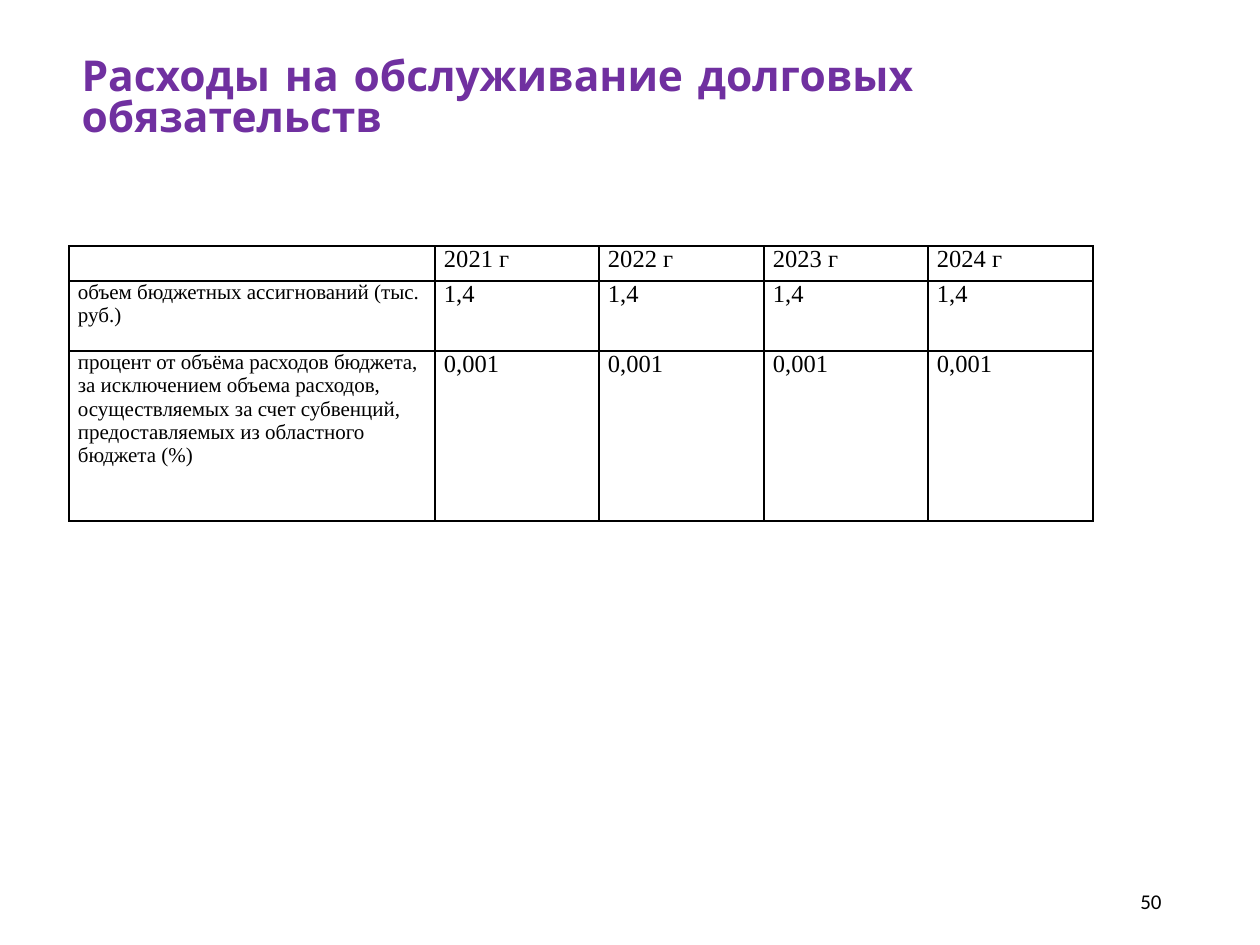
from dataclasses import dataclass

from lxml.etree import SubElement
from pptx import Presentation
from pptx.dml.color import RGBColor as Color
from pptx.enum.text import MSO_ANCHOR as Anchor, MSO_AUTO_SIZE as AutoSize, PP_ALIGN as Align
from pptx.oxml.ns import qn
from pptx.util import Pt

EMU_PER_INCH = 914400
PX_PER_INCH = 126


@dataclass(frozen=True)
class Theme:
    ink: str = "000000"
    accent: str = "7030A0"
    paper: str = "FFFFFF"
    title_font: str = "Comic Neue"
    table_font: str = "Times New Roman"
    number_font: str = "Calibri"
    title_size: float = 24.3
    value_size: float = 14
    label_size: float = 12
    border: float = 1


def px(length):
    return round(length * EMU_PER_INCH / PX_PER_INCH)


class SlideBuilder:
    """Draws themed elements on the current slide, with lengths in px."""

    def __init__(self, deck, theme):
        self.theme = theme
        self.page = deck.slides.add_slide(deck.slide_layouts[5])
        fill = self.page.background.fill
        fill.solid()
        fill.fore_color.rgb = Color.from_string(theme.paper)

    def span(self, para, text, font, size, color, bold=False):
        span = para.add_run()
        span.text = text
        span.font.name = font
        span.font.size = Pt(size)
        span.font.bold = bold
        span.font.color.rgb = Color.from_string(color)

    def title(self, text, left, top, width, height):
        box = self.page.shapes.title
        box.left, box.top, box.width, box.height = map(px, (left, top, width, height))
        frame = box.text_frame
        frame.auto_size = AutoSize.NONE
        frame.word_wrap = True
        frame.vertical_anchor = Anchor.TOP
        frame.margin_top = frame.margin_bottom = 0
        para = frame.paragraphs[0]
        para.alignment = Align.LEFT
        para.line_spacing = 0.8
        self.span(para, text, self.theme.title_font, self.theme.title_size,
                  self.theme.accent, bold=True)

    def page_number(self, text, left, top, width, height):
        box = self.page.shapes.add_textbox(*map(px, (left, top, width, height)))
        frame = box.text_frame
        frame.word_wrap = True
        frame.vertical_anchor = Anchor.MIDDLE
        para = frame.paragraphs[0]
        para.alignment = Align.RIGHT
        self.span(para, text, self.theme.number_font, self.theme.label_size, self.theme.ink)

    def cell_borders(self, cell):
        properties = cell._tc.get_or_add_tcPr()
        for index, side in enumerate(("lnL", "lnR", "lnT", "lnB")):
            line = properties.makeelement(qn(f"a:{side}"), {"w": str(Pt(self.theme.border))})
            paint = SubElement(line, qn("a:solidFill"))
            SubElement(paint, qn("a:srgbClr"), val=self.theme.ink)
            properties.insert(index, line)

    def cell(self, cell, text, size):
        cell.margin_left = cell.margin_right = px(9)
        cell.margin_top = cell.margin_bottom = 0
        cell.fill.background()
        para = cell.text_frame.paragraphs[0]
        if text:
            self.span(para, text, self.theme.table_font, size, self.theme.ink)
        else:
            SubElement(para._p, qn("a:endParaRPr"), sz=str(size * 100))
        self.cell_borders(cell)

    def table(self, rows, left, top, widths, heights):
        frame = self.page.shapes.add_table(
            len(rows), len(widths),
            *map(px, (left, top, sum(widths), sum(heights))))
        table = frame.table
        table.first_row = table.horz_banding = False
        for column, width in zip(table.columns, widths):
            column.width = px(width)
        for row, height, texts in zip(table.rows, heights, rows):
            row.height = px(height)
            for index, (cell, text) in enumerate(zip(row.cells, texts)):
                is_label = index == 0 and text
                size = self.theme.label_size if is_label else self.theme.value_size
                self.cell(cell, text, size)


def main():
    deck = Presentation()
    deck.slide_width, deck.slide_height = px(1260), px(945)
    slide = SlideBuilder(deck, Theme())
    slide.title("Расходы на обслуживание долговых обязательств", 69, 59, 1024, 116)
    slide.page_number("50", 890, 876, 284, 50)
    years = range(2021, 2025)
    rows = [
        ["", *(f"{year} г" for year in years)],
        ["объем бюджетных ассигнований (тыс. руб.)", *["1,4"] * len(years)],
        ["процент от объёма расходов бюджета, за исключением объема расходов, "
         "осуществляемых за счет субвенций, предоставляемых из областного бюджета (%)",
         *["0,001"] * len(years)],
    ]
    slide.table(rows, 69, 246, [366, 164, 165, 164, 165], [35, 70, 170])
    deck.save("out.pptx")


if __name__ == "__main__":
    main()
